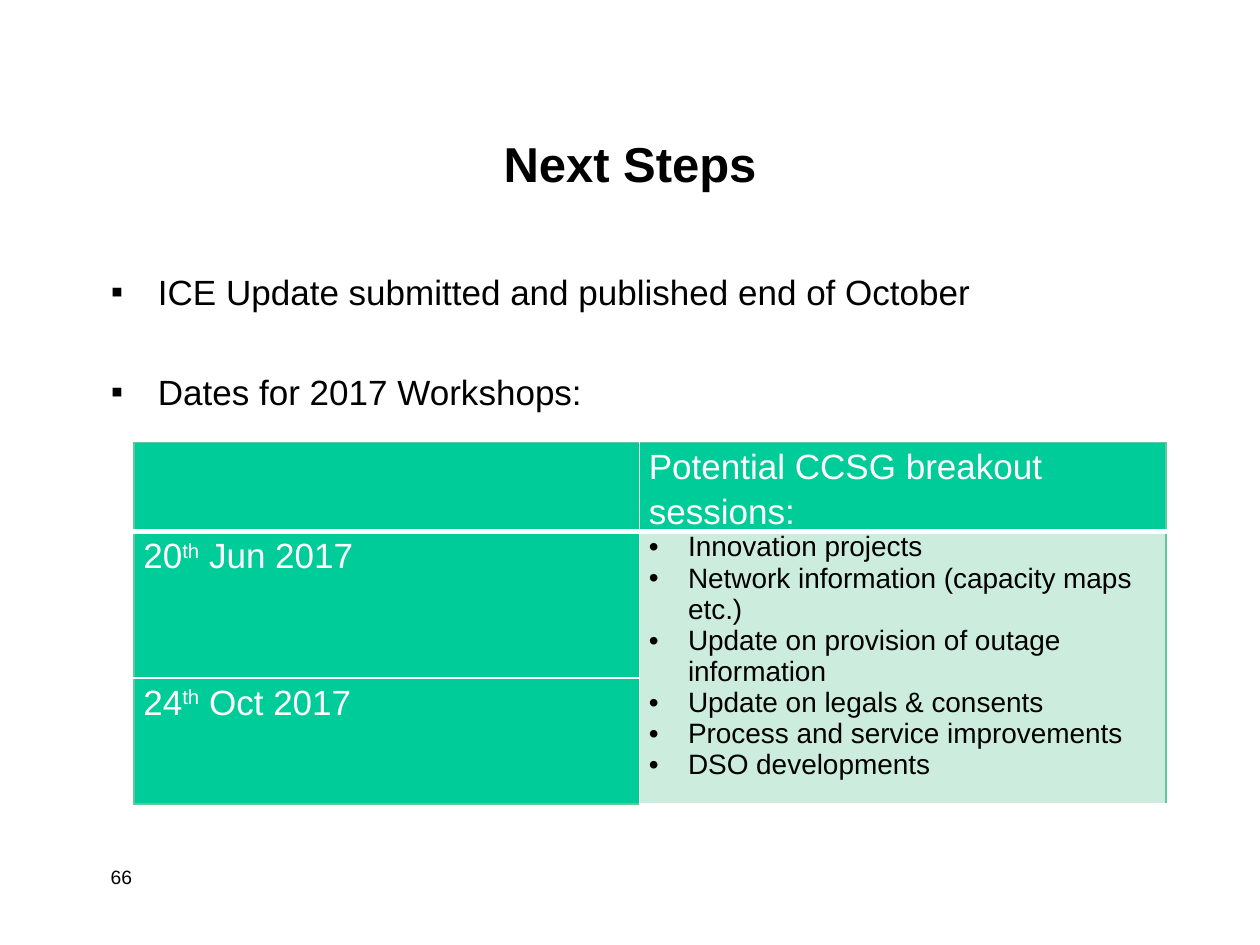
from lxml.etree import SubElement
from pptx import Presentation
from pptx.dml.color import RGBColor
from pptx.enum.text import MSO_ANCHOR as Anchor, PP_ALIGN as Align
from pptx.oxml.ns import qn
from pptx.util import Cm, Pt

# Content
TITLE = "Next Steps"
STEPS = ["ICE Update submitted and published end of October",
         "Dates for 2017 Workshops:"]
HEADING = "Potential CCSG breakout sessions:"
DATES = [("20", "th", " Jun 2017"), ("24", "th", " Oct 2017")]
SESSIONS = ["Innovation projects",
            "Network information (capacity maps etc.)",
            "Update on provision of outage information",
            "Update on legals & consents",
            "Process and service improvements",
            "DSO developments"]
PAGE_NUMBER = "66"

# Style and layout
COLORS = {"text": "000000", "white": "FFFFFF", "header": "00CC99",
          "sessions": "CCECDE", "edge": "60C99C"}
FONT = "Arial"
COLUMN_WIDTHS = [Cm(10.19), Cm(10.62)]
ROW_HEIGHTS = [Cm(1.8), Cm(2.95), Cm(2.54)]


def place(shape, left, top, width, height):
    shape.left, shape.top = Cm(left), Cm(top)
    shape.width, shape.height = Cm(width), Cm(height)


def add_run(paragraph, text, size, color="text", bold=False, superscript=False):
    run = paragraph.add_run()
    run.text = text
    run.font.name, run.font.size, run.font.bold = FONT, Pt(size), bold
    run.font.color.rgb = RGBColor.from_string(COLORS[color])
    if superscript:
        run.font._element.set("baseline", "30000")


def add_bullets(frame, items, bullet, size, indent, gap=0):
    for index, item in enumerate(items):
        paragraph = frame.add_paragraph() if index else frame.paragraphs[0]
        paragraph.space_before = Pt(gap if index else 0)
        properties = paragraph._p.get_or_add_pPr()
        properties.set("marL", str(Cm(indent)))
        properties.set("indent", str(-Cm(indent)))
        SubElement(properties, qn("a:buFont"), typeface=FONT)
        SubElement(properties, qn("a:buChar"), char=bullet)
        add_run(paragraph, item, size)


def add_borders(cell, borders):
    properties = cell._tc.get_or_add_tcPr()
    for side, (color, width) in borders.items():
        line = SubElement(properties, qn(f"a:ln{side}"), w=str(Pt(width)))
        fill = SubElement(line, qn("a:solidFill"))
        SubElement(fill, qn("a:srgbClr"), val=COLORS[color])


def format_cell(cell, row, column):
    last_row, last_column = len(ROW_HEIGHTS) - 1, len(COLUMN_WIDTHS) - 1
    edge, inner, thick = ("edge", 1), ("white", 1), ("white", 3)
    add_borders(cell, {
        "L": inner if column else edge,
        "R": edge if column == last_column else inner,
        "T": edge if row == 0 else thick if row == 1 else inner,
        "B": thick if row == 0 else edge if row == last_row else inner})
    cell.fill.solid()
    color = "sessions" if row and column else "header"
    cell.fill.fore_color.rgb = RGBColor.from_string(COLORS[color])
    cell.margin_left = cell.margin_right = Cm(0.19)
    cell.margin_top = cell.margin_bottom = 0


presentation = Presentation()
presentation.slide_width, presentation.slide_height = Cm(25.4), Cm(19.05)
slide = presentation.slides.add_slide(presentation.slide_layouts[1])

# Title
title = slide.shapes.title
place(title, 1.9, 1.7, 21.6, 3.18)
title.text_frame.vertical_anchor = Anchor.MIDDLE
title_paragraph = title.text_frame.paragraphs[0]
title_paragraph.alignment = Align.CENTER
add_run(title_paragraph, TITLE, 28, bold=True)

# Steps
body = slide.placeholders[1]
place(body, 1.98, 5.33, 21.6, 3.6)
add_bullets(body.text_frame, STEPS, "▪", 20, 0.95, gap=33)

# Workshop table
table = slide.shapes.add_table(
    len(ROW_HEIGHTS), len(COLUMN_WIDTHS), Cm(2.7), Cm(8.92),
    sum(COLUMN_WIDTHS), sum(ROW_HEIGHTS)).table
table.first_row = table.horz_banding = False
for column, width in zip(table.columns, COLUMN_WIDTHS):
    column.width = width
for row, height in zip(table.rows, ROW_HEIGHTS):
    row.height = height
for row in range(len(ROW_HEIGHTS)):
    for column in range(len(COLUMN_WIDTHS)):
        format_cell(table.cell(row, column), row, column)
table.cell(1, 1).merge(table.cell(2, 1))

# Table text
heading = table.cell(0, 1).text_frame.paragraphs[0]
heading.line_spacing = 1.14
add_run(heading, HEADING, 20, "white")
for row, parts in enumerate(DATES, start=1):
    date = table.cell(row, 0).text_frame.paragraphs[0]
    date.line_spacing = 1.14
    for part in parts:
        add_run(date, part, 20, "white", superscript=part == "th")
add_bullets(table.cell(1, 1).text_frame, SESSIONS, "•", 16, 0.79)

# Page number
number = slide.shapes.add_textbox(Cm(1.98), Cm(17.32), Cm(5.28), Cm(1.27))
number.text_frame.word_wrap = True
add_run(number.text_frame.paragraphs[0], PAGE_NUMBER, 11)

presentation.save("out.pptx")
